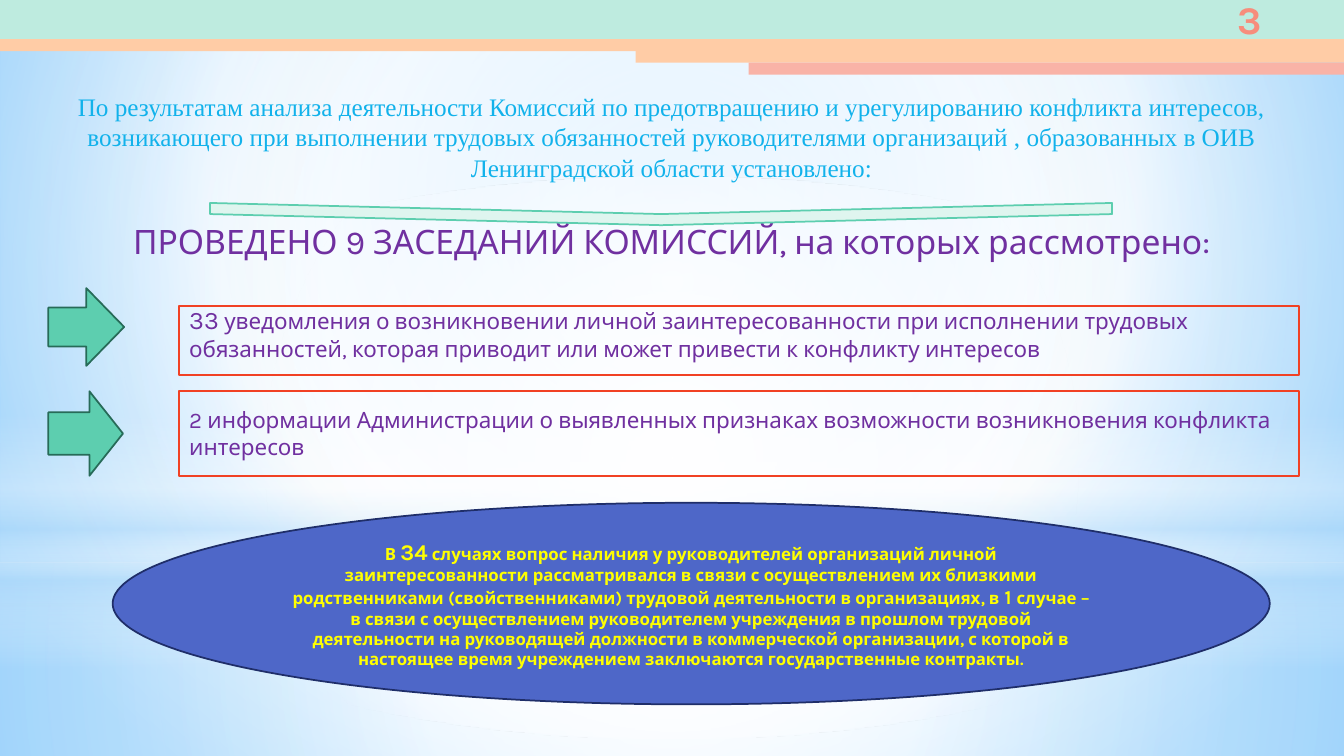
import pptx
import pptx.util
import pptx.dml.color
import pptx.enum.shapes
import pptx.enum.text
import pptx.oxml.ns
import lxml.etree

Cm = pptx.util.Cm
Pt = pptx.util.Pt
KIND = pptx.enum.shapes.MSO_SHAPE
ALIGN = pptx.enum.text.PP_ALIGN
ANCHOR = pptx.enum.text.MSO_ANCHOR
qn = pptx.oxml.ns.qn

WIDTH, HEIGHT = 33.87, 19.05
PURPLE, YELLOW, GREEN, RED = "7030A0", "FFFF00", "5DCEAF", "F14124"
CENTRE = (50, 50, 50, 50)

BACKDROP = ([(0, "9ED5FF", 100), (60, "FFFFFF", 100), (100, "5BB9FF", 100)], (20, 10, 20, 60))
GLOWS = [
    (KIND.RECTANGLE, 14.17, 4.88,
     [(0, "FFFFFF", 91), (37, "FFFFFF", 76), (100, "B4DCFA", 79)], CENTRE),
    (KIND.RECTANGLE, 0, 14.17,
     [(0, "FFFFFF", 89), (48, "FFFFFF", 62), (100, "B4DCFA", 79)], CENTRE),
    (KIND.RECTANGLE, 10.46, 6.35,
     [(0, "FFFFFF", 0), (29, "FFFFFF", 30), (45, "B4DCFA", 40),
      (55, "FFFFFF", 26), (65, "B4DCFA", 60), (100, "FFFFFF", 0)], None),
    (KIND.OVAL, 4.45, 14.17, [(0, "FFFFFF", 100), (56, "FFFFFF", 0)], CENTRE),
]
STRIPES = [
    (0, 0, 1, "BEEBDF"),
    (0, 0.99, 0.3, "FFCCA6"),
    (16.02, 1.28, 0.3, "FFCCA6"),
    (18.87, 1.58, 0.3, "F9B3A7"),
]
HEADING = [
    [("По результатам анализа деятельности Комиссий по предотвращению и урегулированию "
      "конфликта интересов, возникающего при выполнении трудовых обязанностей "
      "руководителями организаций , образованных в ОИВ Ленинградской области установлено:", 18)],
    [("ПРОВЕДЕНО 9 ЗАСЕДАНИЙ КОМИССИЙ, на которых рассмотрено:", 24)],
]
FINDINGS = [
    (7.72, 1.73, 0.5, (7.26, 1.91, 1.96), 0.5,
     [("33", 18),
      (" уведомления о возникновении личной заинтересованности при исполнении трудовых "
       "обязанностей, которая приводит или может привести к конфликту интересов", 16)]),
    (9.86, 2.13, 0.13, (9.86, 1.88, 2.13), 0.45,
     [("2 информации Администрации о выявленных признаках возможности возникновения "
       "конфликта интересов", 16)]),
]
CASES = [
    ("В ", 12),
    ("34", 16),
    (" случаях вопрос наличия у руководителей организаций личной заинтересованности "
     "рассматривался в связи с осуществлением их близкими родственниками "
     "(свойственниками) трудовой деятельности в организациях, в ", 12),
    ("1 ", 14),
    ("случае – в связи с осуществлением руководителем учреждения в прошлом трудовой "
     "деятельности на руководящей должности в коммерческой организации, с которой в "
     "настоящее время учреждением заключаются государственные контракты.", 12),
]


def paint(color, value):
    color.rgb = pptx.dml.color.RGBColor.from_string(value)


def set_gradient(fill, holder, stops, focus):
    fill.gradient()
    gradient = holder.find(".//" + qn("a:gradFill"))
    for child in list(gradient):
        gradient.remove(child)
    stop_list = lxml.etree.SubElement(gradient, qn("a:gsLst"))
    for position, value, alpha in stops:
        stop = lxml.etree.SubElement(stop_list, qn("a:gs"), pos=str(position * 1000))
        color = lxml.etree.SubElement(stop, qn("a:srgbClr"), val=value)
        if alpha < 100:
            lxml.etree.SubElement(color, qn("a:alpha"), val=str(alpha * 1000))
    if focus:
        circle = lxml.etree.SubElement(gradient, qn("a:path"), path="circle")
        edges = {side: str(share * 1000) for side, share in zip("ltrb", focus)}
        lxml.etree.SubElement(circle, qn("a:fillToRect"), **edges)
    else:
        lxml.etree.SubElement(gradient, qn("a:lin"), ang="5400000", scaled="0")


def add_shape(page, kind, left, top, width, height, fill=None, line=None):
    shape = page.shapes.add_shape(kind, Cm(left), Cm(top), Cm(width), Cm(height))
    shape.shadow.inherit = False
    if fill:
        shape.fill.solid()
        paint(shape.fill.fore_color, fill)
    else:
        shape.fill.background()
    if line:
        paint(shape.line.color, line)
        shape.line.width = Pt(1.25)
    else:
        shape.line.fill.background()
    return shape


def write(para, pieces, color, align, font="Karla", bold=False):
    para.alignment = align
    for text, size in pieces:
        span = para.add_run()
        span.text = text
        span.font.name = font
        span.font.size = Pt(size)
        span.font.bold = bold
        paint(span.font.color, color)


def add_text(page, left, top, width, height):
    box = page.shapes.add_textbox(Cm(left), Cm(top), Cm(width), Cm(height))
    box.text_frame.word_wrap = True
    return box.text_frame


def main():
    deck = pptx.Presentation()
    deck.slide_width, deck.slide_height = Cm(WIDTH), Cm(HEIGHT)
    page = deck.slides.add_slide(deck.slide_layouts[6])

    set_gradient(page.background.fill, page.element, *BACKDROP)
    for kind, top, height, stops, focus in GLOWS:
        glow = add_shape(page, kind, 0, top, WIDTH, height)
        set_gradient(glow.fill, glow.element.spPr, stops, focus)
    for left, top, height, color in STRIPES:
        add_shape(page, KIND.RECTANGLE, left, top, WIDTH - left, height, color)

    heading = add_text(page, 1.52, 2.18, 30.81, 4.62)
    write(heading.paragraphs[0], HEADING[0], "12B2EB", ALIGN.CENTER, "Times New Roman")
    summary = heading.add_paragraph()
    summary.space_before = Pt(28)
    write(summary, HEADING[1], PURPLE, ALIGN.CENTER)

    number = add_text(page, 30.23, 0, 2.51, 0.94)
    number.vertical_anchor = ANCHOR.MIDDLE
    write(number.paragraphs[0], [("3", 28)], "F78D7C", ALIGN.CENTER, bold=True)

    for top, height, bottom, (arrow_top, arrow_width, arrow_height), head, pieces in FINDINGS:
        frame = add_shape(page, KIND.RECTANGLE, 4.52, top, 28.22, height, line=RED).text_frame
        frame.vertical_anchor = ANCHOR.MIDDLE
        frame.margin_bottom = Cm(bottom)
        write(frame.paragraphs[0], pieces, PURPLE, ALIGN.LEFT)
        arrow = add_shape(page, KIND.RIGHT_ARROW, 1.22, arrow_top, arrow_width, arrow_height,
                          GREEN, "276B58")
        arrow.adjustments[1] = head

    chevron = add_shape(page, KIND.CHEVRON, 16.38, -5.97, 0.56, 22.73, "DFF5EF", GREEN)
    chevron.rotation = 90

    ellipse = add_shape(page, KIND.OVAL, 2.84, 12.67, 29.16, 5.08, "4E67C8", "1F2E69")
    ellipse.text_frame.vertical_anchor = ANCHOR.MIDDLE
    write(ellipse.text_frame.paragraphs[0], CASES, YELLOW, ALIGN.CENTER, bold=True)

    deck.save("out.pptx")


if __name__ == "__main__":
    main()
